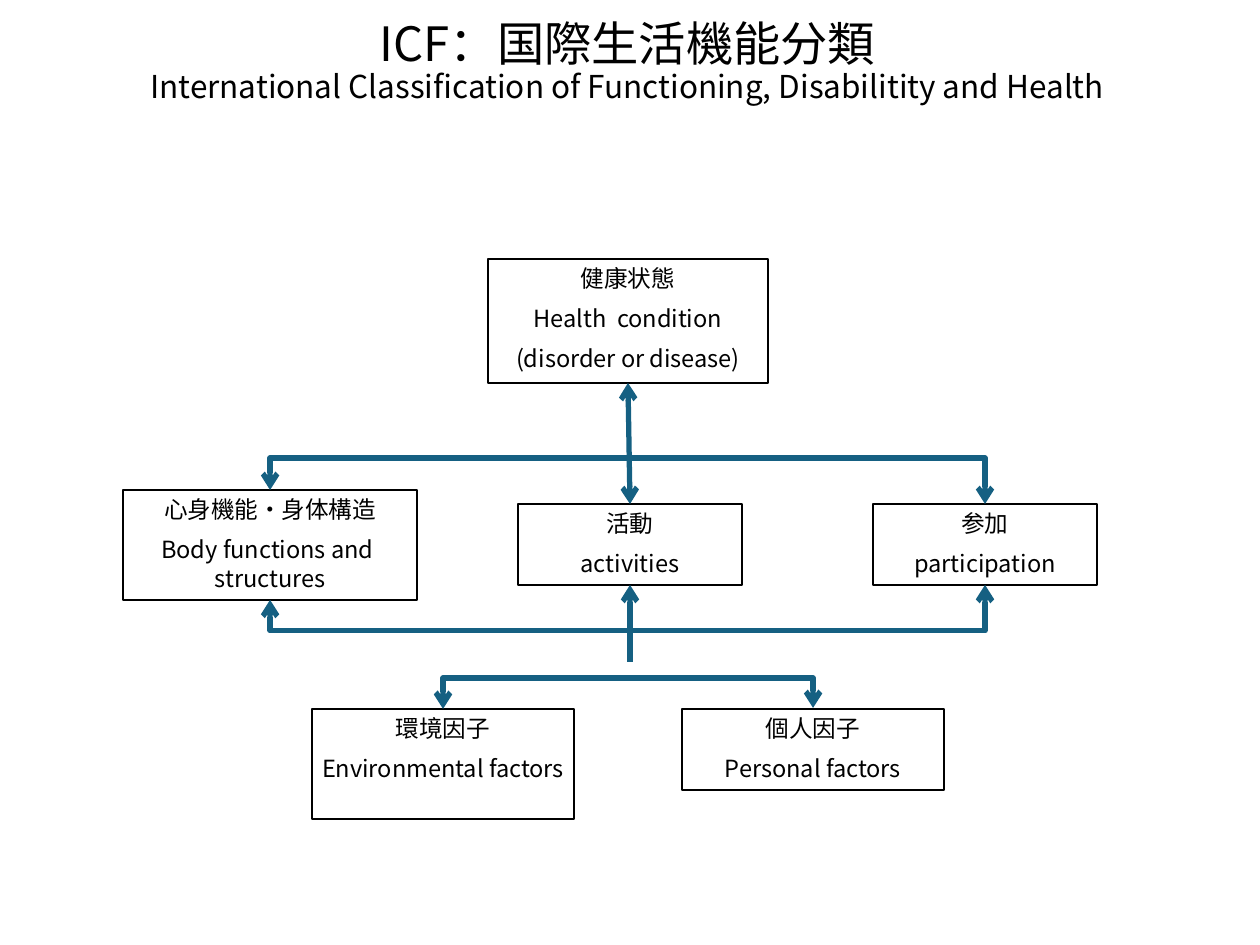
from collections import namedtuple
from dataclasses import dataclass

from lxml.etree import SubElement
from pptx import Presentation
from pptx.dml.color import RGBColor
from pptx.enum.shapes import MSO_CONNECTOR, MSO_SHAPE
from pptx.enum.text import MSO_ANCHOR, MSO_AUTO_SIZE, PP_ALIGN
from pptx.oxml.ns import qn
from pptx.util import Emu, Pt

Box = namedtuple("Box", "x y w h")


@dataclass(frozen=True)
class Theme:
    font: str = "Noto Sans CJK JP"
    ink: RGBColor = RGBColor(0, 0, 0)
    paper: RGBColor = RGBColor(255, 255, 255)
    arrow: RGBColor = RGBColor(0x15, 0x60, 0x82)
    title: float = 27
    subtitle: float = 18
    label: float = 13.5
    border: float = 1.25
    stroke: float = 3


T = Theme()


def px(n):
    return Emu(round(n * 914400 / 126))


def place(shape, box):
    shape.left, shape.top, shape.width, shape.height = map(px, box)


def style_run(r, size):
    r.font.name = T.font
    r.font.size = Pt(size)
    r.font.color.rgb = T.ink
    SubElement(r.font._element, qn("a:ea"), typeface=T.font)


def add_title(s, box, lines):
    title = s.shapes.title
    place(title, box)
    tf = title.text_frame
    tf.text = "\v".join(lines)
    tf.auto_size = MSO_AUTO_SIZE.NONE
    tf.vertical_anchor = MSO_ANCHOR.MIDDLE
    p = tf.paragraphs[0]
    p.alignment = PP_ALIGN.CENTER
    p.line_spacing = 0.9
    for r, size in zip(p.runs, (T.title, T.subtitle)):
        style_run(r, size)


def add_node(s, box, lines):
    sp = s.shapes.add_shape(MSO_SHAPE.RECTANGLE, *map(px, box))
    sp.shadow.inherit = False
    sp.fill.solid()
    sp.fill.fore_color.rgb = T.paper
    sp.line.color.rgb = T.ink
    sp.line.width = Pt(T.border)
    tf = sp.text_frame
    tf.text = "\n".join(lines)
    tf.word_wrap = True
    tf.auto_size = MSO_AUTO_SIZE.SHAPE_TO_FIT_TEXT
    tf.vertical_anchor = MSO_ANCHOR.TOP
    tf.margin_left = tf.margin_right = px(9)
    tf.margin_top = tf.margin_bottom = px(5)
    for p in tf.paragraphs:
        p.alignment = PP_ALIGN.CENTER
        before = SubElement(p._p.get_or_add_pPr(), qn("a:spcBef"))
        SubElement(before, qn("a:spcPct"), val="50000")
        for r in p.runs:
            style_run(r, T.label)


def style_arrow(cxn, ends):
    cxn.line.color.rgb = T.arrow
    cxn.line.width = Pt(T.stroke)
    ln = cxn.line._get_or_add_ln()
    for end in ends:
        SubElement(ln, qn(f"a:{end}"), type="arrow")
    SubElement(cxn._element.spPr, qn("a:effectLst"))


def add_arrow(s, start, end, ends=("headEnd", "tailEnd")):
    cxn = s.shapes.add_connector(MSO_CONNECTOR.STRAIGHT, *map(px, start + end))
    style_arrow(cxn, ends)


def add_bracket(s, start, end, rail):
    (x0, y0), (x1, y1) = start, end
    w, h = abs(y1 - y0), x1 - x0
    cxn = s.shapes.add_connector(MSO_CONNECTOR.ELBOW, 0, 0, 0, 0)
    place(cxn, Box((x0 + x1 - w) / 2, (y0 + y1 - h) / 2, w, h))
    spPr = cxn._element.spPr
    xfrm = spPr.find(qn("a:xfrm"))
    xfrm.set("flipH", "1")
    if y1 > y0:
        xfrm.set("rot", str(270 * 60000))
    else:
        xfrm.set("rot", str(90 * 60000))
        xfrm.set("flipV", "1")
    adj = round((rail - y0) / (y1 - y0) * 100000)
    guides = spPr.find(qn("a:prstGeom")).find(qn("a:avLst"))
    SubElement(guides, qn("a:gd"), name="adj1", fmla=f"val {adj}")
    style_arrow(cxn, ("headEnd", "tailEnd"))


def top(box):
    return box.x + box.w // 2, box.y


def bottom(box):
    return box.x + box.w // 2, box.y + box.h


def add_diagram(s, box):
    def at(x, y, w, h):
        return Box(box.x + x, box.y + y, w, h)

    health = at(365, 0, 280, 124)
    body = at(0, 231, 294, 110)
    activity = at(395, 245, 224, 81)
    participation = at(750, 245, 224, 81)
    environment = at(189, 450, 262, 110)
    personal = at(559, 450, 262, 81)

    add_node(s, health, ["健康状態", "Health  condition", "(disorder or disease)"])
    add_node(s, body, ["心身機能・身体構造", "Body functions and  structures"])
    add_node(s, activity, ["活動", "activities"])
    add_node(s, participation, ["参加", "participation"])
    add_node(s, environment, ["環境因子", "Environmental factors"])
    add_node(s, personal, ["個人因子", "Personal factors"])

    add_bracket(s, top(body), top(participation), box.y + 199)
    add_bracket(s, bottom(body), bottom(participation), box.y + 372)
    x, y = top(personal)
    add_bracket(s, top(environment), (x, y - 1), box.y + 419)
    x, y = bottom(activity)
    add_arrow(s, (x, y + 77), (x, y), ("tailEnd",))
    add_arrow(s, bottom(health), top(activity))


def main():
    prs = Presentation()
    prs.slide_width, prs.slide_height = px(1260), px(945)
    s = prs.slides.add_slide(prs.slide_layouts[5])
    add_title(s, Box(54, 8, 1147, 110), [
        "ICF：国際生活機能分類",
        "International Classification of Functioning, Disabilitity and Health",
    ])
    add_diagram(s, Box(123, 259, 974, 560))
    prs.save("out.pptx")


if __name__ == "__main__":
    main()
